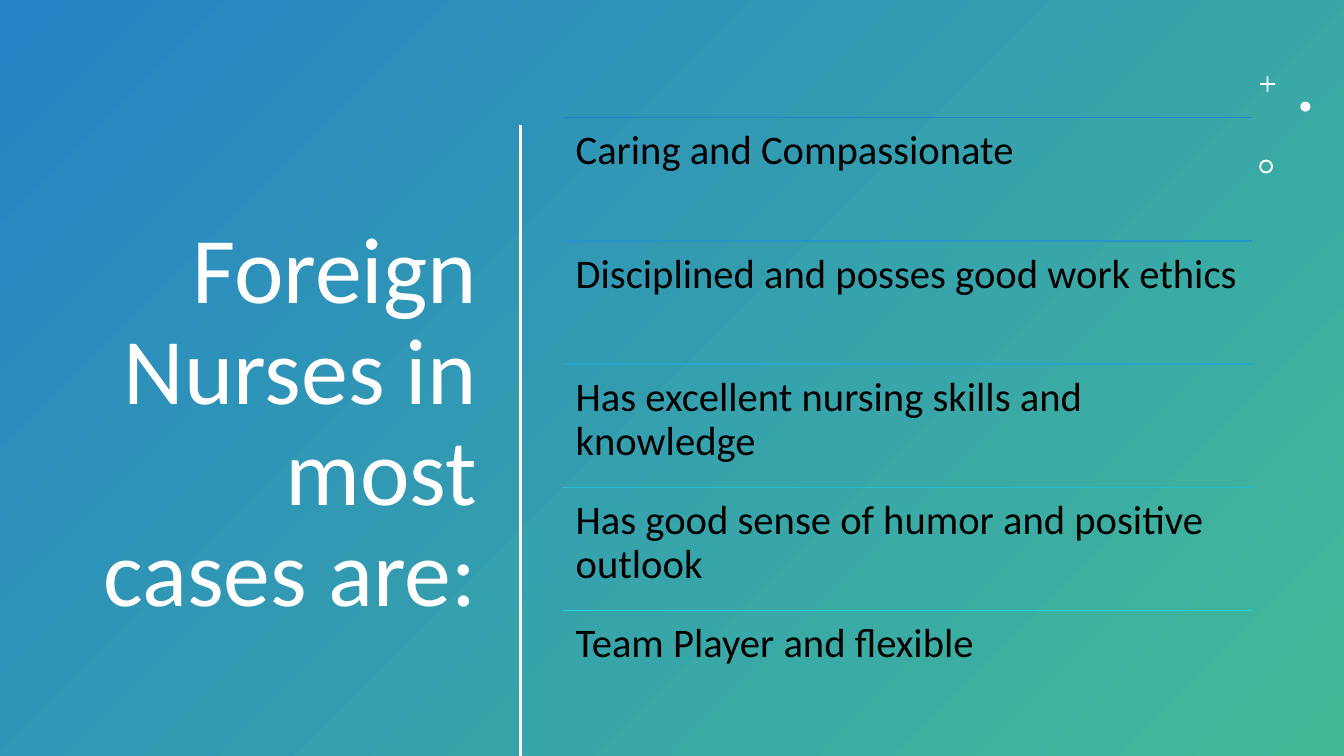
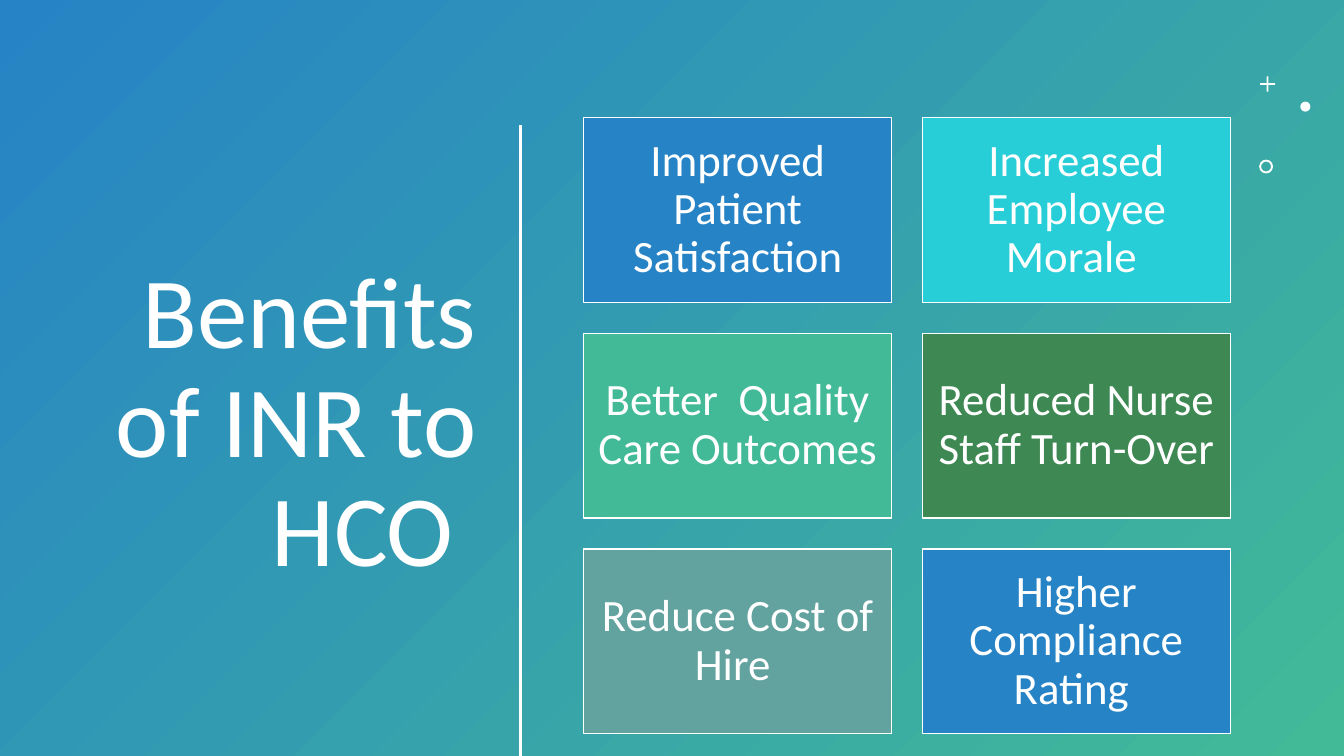
from dataclasses import dataclass

from lxml.etree import SubElement
from pptx import Presentation
from pptx.dml.color import RGBColor
from pptx.enum.shapes import MSO_CONNECTOR, MSO_SHAPE
from pptx.enum.text import MSO_ANCHOR, MSO_AUTO_SIZE, PP_ALIGN
from pptx.oxml.ns import qn
from pptx.util import Inches, Pt


@dataclass(frozen=True)
class Theme:
    font: str = "Calibri"
    white: str = "FFFFFF"
    black: str = "000000"
    blue: str = "2683C6"
    cyan: str = "27CED7"
    green: str = "42BA97"
    forest: str = "3E8853"
    sage: str = "62A39F"
    rules: tuple = ("2683C6", "2695CA", "27A7CE", "27BAD3", "27CED7")
    trait_size: int = 29
    benefit_size: int = 32
    line_spacing: float = 0.9


class Deck:
    COLUMNS, ROWS = 160, 90

    def __init__(self, theme):
        self.theme = theme
        self.presentation = Presentation()
        self.presentation.slide_width = Inches(13.33)
        self.presentation.slide_height = Inches(7.5)
        self.slide = None

    def place(self, left, top, width, height):
        column = self.presentation.slide_width / self.COLUMNS
        row = self.presentation.slide_height / self.ROWS
        return [round(n * unit) for n, unit in
                zip((left, top, width, height), (column, row, column, row))]

    def start_slide(self, heading, size):
        layout = self.presentation.slide_layouts.get_by_name("Title Only")
        self.slide = self.presentation.slides.add_slide(layout)
        self.backdrop()
        self.title(heading, size)
        self.line(62, 14.9, 62, self.ROWS, self.theme.white, 2)
        self.shape(MSO_SHAPE.CROSS, (150, 9.1, 1.8, 1.8), self.theme.white, adjust=0.44)
        self.shape(MSO_SHAPE.OVAL, (154.8, 12.1, 1.2, 1.2), self.theme.white)
        self.shape(MSO_SHAPE.DONUT, (149.9, 19, 1.65, 1.65), self.theme.white, adjust=0.14)

    def backdrop(self):
        panel = self.shape(MSO_SHAPE.RECTANGLE, (0, 0, self.COLUMNS, self.ROWS), self.theme.blue)
        panel.fill.gradient()
        panel.fill.gradient_angle = 315
        for stop, color in zip(panel.fill.gradient_stops, (self.theme.blue, self.theme.green)):
            stop.color.rgb = RGBColor.from_string(color)
        self.slide.shapes.title.element.addprevious(panel.element)

    def title(self, heading, size):
        title = self.slide.shapes.title
        title.left, title.top, title.width, title.height = self.place(6.24, 13.9, 51.7, 73.3)
        self.set_words(title.text_frame, heading, size, self.theme.white,
                       PP_ALIGN.RIGHT, MSO_ANCHOR.MIDDLE)

    def shape(self, kind, box, color, adjust=None):
        shape = self.slide.shapes.add_shape(kind, *self.place(*box))
        shape.shadow.inherit = False
        shape.fill.solid()
        shape.fill.fore_color.rgb = RGBColor.from_string(color)
        shape.line.fill.background()
        if adjust is not None:
            shape.adjustments[0] = adjust
        return shape

    def line(self, left, top, right, bottom, color, weight):
        line = self.slide.shapes.add_connector(
            MSO_CONNECTOR.STRAIGHT, *self.place(left, top, right, bottom))
        line.line.color.rgb = RGBColor.from_string(color)
        line.line.width = Pt(weight)
        SubElement(line.element.spPr, qn("a:effectLst"))

    def text(self, box, words, size, color):
        frame = self.slide.shapes.add_textbox(*self.place(*box)).text_frame
        self.set_words(frame, words, size, color, PP_ALIGN.LEFT, MSO_ANCHOR.TOP, 1.45)

    def card(self, box, words, color):
        card = self.shape(MSO_SHAPE.RECTANGLE, box, color)
        card.line.color.rgb = RGBColor.from_string(self.theme.white)
        card.line.width = Pt(1)
        self.set_words(card.text_frame, words, self.theme.benefit_size, self.theme.white,
                       PP_ALIGN.CENTER, MSO_ANCHOR.MIDDLE, 1.55)

    def set_words(self, frame, words, size, color, align, anchor, inset=None):
        frame.text = words
        frame.word_wrap = True
        frame.auto_size = MSO_AUTO_SIZE.NONE
        frame.vertical_anchor = anchor
        if inset is not None:
            (frame.margin_left, frame.margin_top,
             frame.margin_right, frame.margin_bottom) = self.place(*[inset] * 4)
        paragraph = frame.paragraphs[0]
        paragraph.alignment = align
        paragraph.line_spacing = self.theme.line_spacing
        for run in paragraph.runs:
            run.font.name = self.theme.font
            run.font.size = Pt(size)
            run.font.color.rgb = RGBColor.from_string(color)

    def trait_list(self, traits):
        left, top, width, pitch = 67.08, 14, 82, 14.67
        for index, (trait, color) in enumerate(zip(traits, self.theme.rules)):
            y = top + index * pitch
            self.line(left, y, left + width, y, color, 1)
            self.text((left, y, width, pitch), trait, self.theme.trait_size, self.theme.black)

    def benefit_grid(self, benefits):
        left, top, width, height, gap = 69.5, 14, 36.65, 22, 3.67
        for index, (benefit, color) in enumerate(benefits):
            row, column = divmod(index, 2)
            box = (left + column * (width + gap), top + row * (height + gap), width, height)
            self.card(box, benefit, color)


def main():
    theme = Theme()
    deck = Deck(theme)

    deck.start_slide("Foreign Nurses in most cases are:", 67)
    deck.trait_list([
        "Caring and Compassionate",
        "Disciplined and posses good work ethics",
        "Has excellent nursing skills and knowledge ",
        "Has good sense of humor and positive outlook",
        "Team Player and flexible ",
    ])

    deck.start_slide("Benefits of INR to HCO ", 72)
    deck.benefit_grid([
        ("Improved Patient Satisfaction", theme.blue),
        ("Increased Employee Morale ", theme.cyan),
        ("Better  Quality Care Outcomes", theme.green),
        ("Reduced Nurse Staff Turn-Over", theme.forest),
        ("Reduce Cost of Hire ", theme.sage),
        ("Higher Compliance Rating ", theme.blue),
    ])

    deck.presentation.save("out.pptx")


if __name__ == "__main__":
    main()
